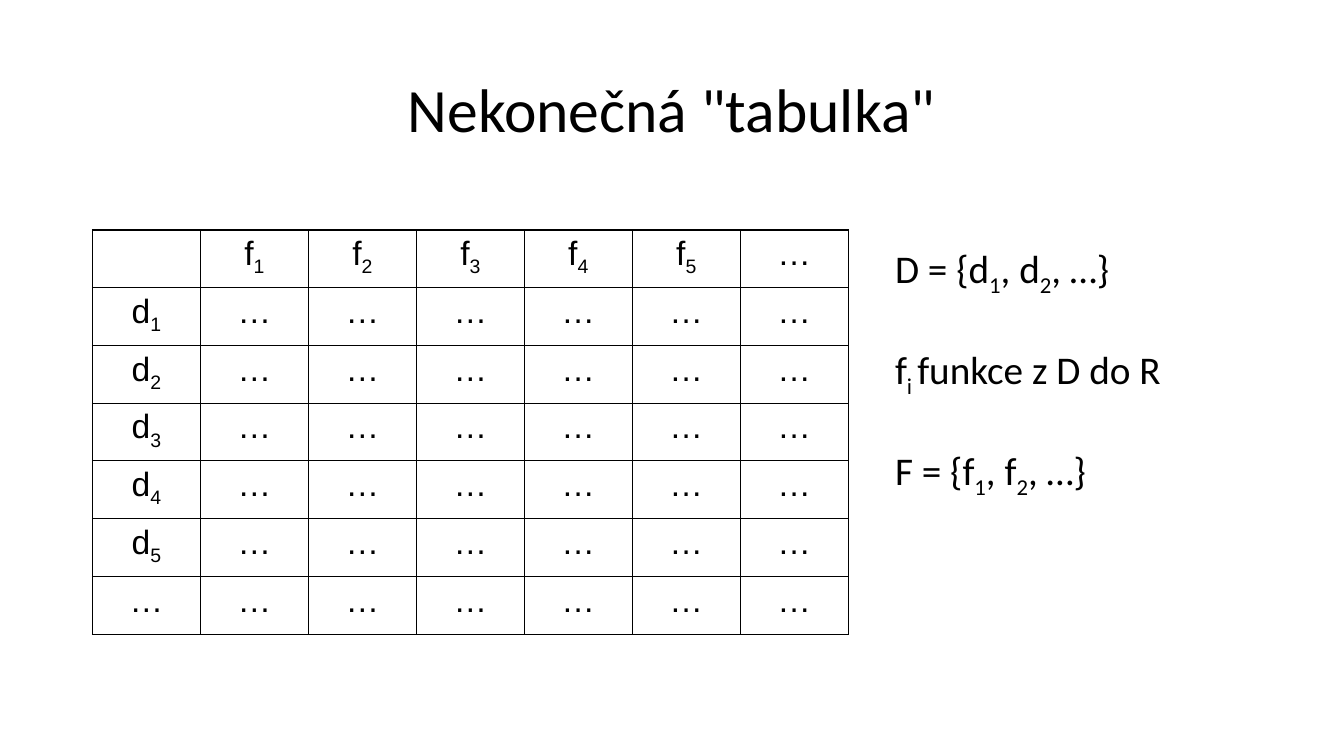
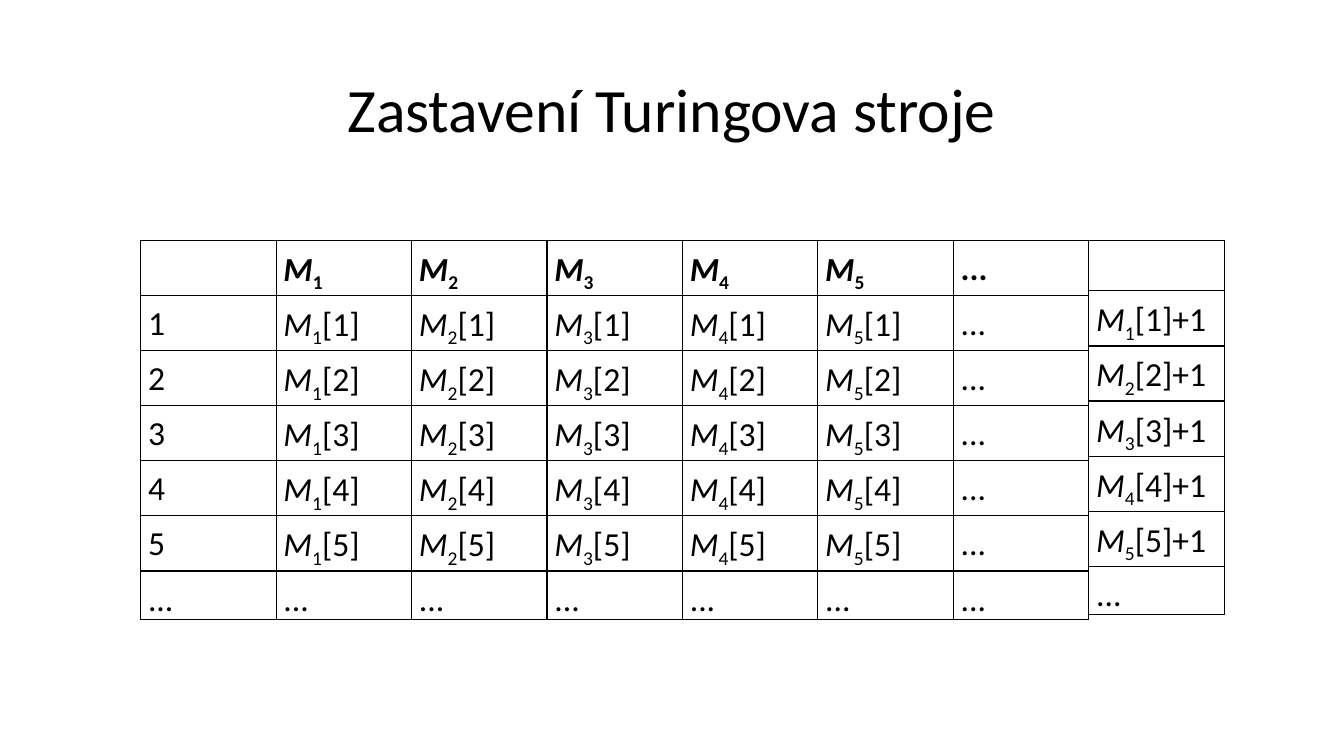
from dataclasses import dataclass

from lxml.etree import SubElement
from pptx import Presentation
from pptx.dml.color import RGBColor as Rgb
from pptx.enum.text import MSO_ANCHOR as Anchor, PP_ALIGN as Align
from pptx.oxml.ns import qn
from pptx.util import Pt

PX = 9525


@dataclass(frozen=True)
class Theme:
    """Colours, fonts and type sizes of the deck."""
    ink: Rgb = Rgb(0, 0, 0)
    paper: Rgb = Rgb(255, 255, 255)
    body: str = "Calibri"
    sans: str = "Arial"
    title: int = 44
    note: int = 28
    cell: int = 24
    rule: int = 1
    drop: int = -25000


@dataclass(frozen=True)
class Box:
    """Place and size in px."""
    x: int
    y: int
    w: int
    h: int

    def emu(self) -> tuple[int, ...]:
        """Give the four lengths in EMU."""
        return tuple(n * PX for n in (self.x, self.y, self.w, self.h))


@dataclass(frozen=True)
class Style:
    """Look of the text in a table."""
    font: str
    align: Align
    pad: tuple[int, int]
    lead: float = 1.0
    bold: bool = False


@dataclass(frozen=True)
class Grid:
    """Table with equal columns and rows below a head row."""
    box: Box
    head: int
    rows: list[list[str]]
    style: Style


THEME = Theme()
TITLE = Box(88, 38, 1104, 139)
NOTE = Box(843, 228, 349, 236)
PLAIN = Style(THEME.sans, Align.CENTER, (10, 5))
TIGHT = Style(THEME.body, Align.JUSTIFY, (7, 0), 1.2)
BOLD = Style(THEME.body, Align.JUSTIFY, (7, 0), 1.2, True)
NUMS = range(1, 6)


def write(para, text: str, font: str, size: int, bold: bool = False) -> None:
    """Add runs to a paragraph, with subscripts between underscores."""
    for i, part in enumerate(text.split("_")):
        if not part:
            continue
        run = para.add_run()
        run.text = part
        run.font.name, run.font.size = font, Pt(size)
        run.font.color.rgb = THEME.ink
        run.font.bold, run.font.italic = bold, part == "M"
        if i % 2:
            run.font._element.set("baseline", str(THEME.drop))


def frame(slide, box: Box):
    """Add a wrapping text box and give its text frame."""
    text = slide.shapes.add_textbox(*box.emu()).text_frame
    text.word_wrap = True
    return text


def start(deck, title: str):
    """Add a blank slide with its title."""
    slide = deck.slides.add_slide(deck.slide_layouts[6])
    text = frame(slide, TITLE)
    text.vertical_anchor = Anchor.MIDDLE
    para = text.paragraphs[0]
    para.alignment, para.line_spacing = Align.CENTER, 0.9
    write(para, title, THEME.body, THEME.title)
    return slide


def edge(cell) -> None:
    """Rule all four sides of a cell."""
    props = cell._tc.get_or_add_tcPr()
    for side in "LRTB":
        line = SubElement(props, qn(f"a:ln{side}"), w=str(Pt(THEME.rule)))
        fill = SubElement(line, qn("a:solidFill"))
        SubElement(fill, qn("a:srgbClr"), val=str(THEME.ink))


def fill(cell, text: str, style: Style, bold: bool) -> None:
    """Rule, colour and write one cell."""
    edge(cell)
    cell.fill.solid()
    cell.fill.fore_color.rgb = THEME.paper
    wide, high = (n * PX for n in style.pad)
    cell.margin_left = cell.margin_right = wide
    cell.margin_top = cell.margin_bottom = high
    para = cell.text_frame.paragraphs[0]
    para.alignment, para.line_spacing = style.align, style.lead
    write(para, text, style.font, THEME.cell, bold)


def draw(slide, grid: Grid) -> None:
    """Add a table to a slide."""
    rows, cols = len(grid.rows), len(grid.rows[0])
    table = slide.shapes.add_table(rows, cols, *grid.box.emu()).table
    table.first_row = table.horz_banding = False
    for col in table.columns:
        col.width = grid.box.w * PX // cols
    for i, row in enumerate(table.rows):
        rest = (grid.box.h - grid.head) * PX // (rows - 1)
        row.height = rest if i else grid.head * PX
        for cell, text in zip(row.cells, grid.rows[i]):
            fill(cell, text, grid.style, grid.style.bold and i == 0)


def endless(deck) -> None:
    """Build the slide of the infinite table."""
    slide = start(deck, 'Nekonečná "tabulka"')
    rows = [["", *(f"f_{n}_" for n in NUMS), "…"]]
    rows += [[f"d_{n}_"] + ["…"] * 6 for n in NUMS]
    rows.append(["…"] * 7)
    draw(slide, Grid(Box(88, 219, 720, 385), 55, rows, PLAIN))
    text = frame(slide, NOTE)
    lines = "D = {d_1_, d_2_, …}", "f_i _funkce z D do R", "F = {f_1_, f_2_, …}"
    for i, line in enumerate(lines):
        para = text.add_paragraph() if i else text.paragraphs[0]
        para.space_before = Pt(34 if i else 0)
        write(para, line, THEME.body, THEME.note)


def halting(deck) -> None:
    """Build the slide of the halting problem."""
    slide = start(deck, "Zastavení Turingova stroje")
    rows = [["", *(f"M_{m}_" for m in NUMS), "..."]]
    rows += [[str(n), *(f"M_{m}_[{n}]" for m in NUMS), "..."] for n in NUMS]
    rows.append(["..."] * 7)
    draw(slide, Grid(Box(134, 229, 903, 322), 46, rows, BOLD))
    diag = [[""], *([f"M_{n}_[{n}]+1"] for n in NUMS), ["..."]]
    draw(slide, Grid(Box(1037, 229, 129, 324), 48, diag, TIGHT))


def main() -> None:
    """Build and save the deck."""
    deck = Presentation()
    deck.slide_width, deck.slide_height = 1280 * PX, 720 * PX
    endless(deck)
    halting(deck)
    deck.save("out.pptx")


if __name__ == "__main__":
    main()
